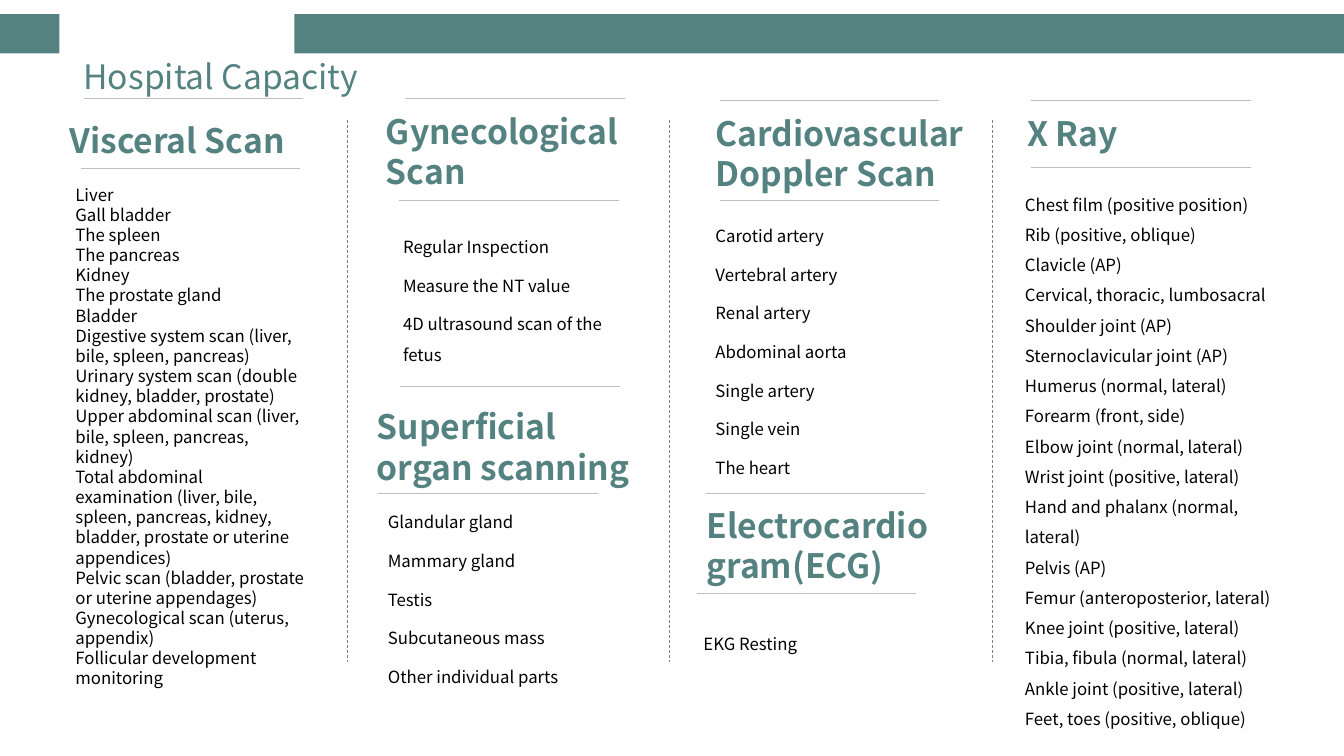
from dataclasses import dataclass

from lxml import etree
from pptx import Presentation
from pptx.dml.color import RGBColor
from pptx.enum.dml import MSO_LINE
from pptx.enum.shapes import MSO_CONNECTOR, MSO_SHAPE
from pptx.enum.text import MSO_ANCHOR, MSO_AUTO_SIZE, PP_ALIGN
from pptx.oxml.ns import qn
from pptx.util import Inches, Pt

STRAIGHT = MSO_CONNECTOR.STRAIGHT
RECTANGLE = MSO_SHAPE.RECTANGLE
DASH = MSO_LINE.DASH
TOP, MIDDLE = MSO_ANCHOR.TOP, MSO_ANCHOR.MIDDLE
LEFT, CENTER = PP_ALIGN.LEFT, PP_ALIGN.CENTER


@dataclass(frozen=True)
class Theme:
    font: str = "Noto Sans CJK SC"
    teal: RGBColor = RGBColor(0x54, 0x82, 0x80)
    black: RGBColor = RGBColor(0, 0, 0)
    rule: RGBColor = RGBColor(0xBF, 0xBF, 0xBF)
    divider: RGBColor = RGBColor(0x80, 0x80, 0x80)
    heading_size: int = 24
    body_size: int = 12
    line_width: float = 0.5


# Grid: ten columns and ten rows to the inch
CELL = Inches(0.1)
COLUMNS, ROWS = 133.33, 75
RULE_COLUMNS = 21.8


def cells(*counts):
    return [round(count * CELL) for count in counts]


class SlideBuilder:
    def __init__(self, slide, theme):
        self.slide = slide
        self.theme = theme

    def band(self, column, row, width, height):
        shape = self.slide.shapes.add_shape(RECTANGLE, *cells(column, row, width, height))
        shape.shadow.inherit = False
        shape.fill.solid()
        shape.fill.fore_color.rgb = self.theme.teal
        shape.line.fill.background()

    def line(self, start, end, color, dash=None):
        connector = self.slide.shapes.add_connector(STRAIGHT, *cells(*start, *end))
        connector.line.color.rgb = color
        connector.line.width = Pt(self.theme.line_width)
        if dash is not None:
            connector.line.dash_style = dash
        etree.SubElement(connector._element.spPr, qn("a:effectLst"))

    def rule(self, column, row):
        self.line((column, row), (column + RULE_COLUMNS, row), self.theme.rule)

    def text(self, box, lines, size, color, bold=False, spacing=None, gap=0,
             anchor=TOP, align=LEFT):
        frame = self.slide.shapes.add_textbox(*cells(*box)).text_frame
        frame.word_wrap = True
        frame.auto_size = MSO_AUTO_SIZE.SHAPE_TO_FIT_TEXT
        frame.vertical_anchor = anchor
        frame.text = "\n".join(lines)
        for index, paragraph in enumerate(frame.paragraphs):
            paragraph.alignment = align
            paragraph.space_before = Pt(gap if index else 0)
            if spacing:
                paragraph.line_spacing = spacing
            for run in paragraph.runs:
                run.font.name = self.theme.font
                run.font.size = Pt(size)
                run.font.bold = bold
                run.font.color.rgb = color

    def heading(self, box, title):
        self.text(box, [title], self.theme.heading_size, self.theme.teal, bold=True)

    def section(self, section):
        self.rule(*section.rule_above)
        self.heading(section.heading_box, section.title)
        self.rule(*section.rule_below)
        self.text(section.list_box, section.items, self.theme.body_size,
                  self.theme.black, spacing=section.spacing, gap=section.gap)


@dataclass(frozen=True)
class Section:
    title: str
    rule_above: tuple
    heading_box: tuple
    rule_below: tuple
    list_box: tuple
    items: tuple
    spacing: float = 1.5
    gap: int = 6


SECTIONS = (
    Section("Visceral Scan", (8.3, 9.8), (5.9, 11.4, 28, 5.1), (8, 16.7),
            (6.5, 17.8, 24.7, 56.6), (
                "Liver",
                "Gall bladder",
                "The spleen",
                "The pancreas",
                "Kidney",
                "The prostate gland",
                "Bladder",
                "Digestive system scan (liver, bile, spleen, pancreas)",
                "Urinary system scan (double kidney, bladder, prostate)",
                "Upper abdominal scan (liver, bile, spleen, pancreas, kidney)",
                "Total abdominal examination (liver, bile, spleen, pancreas, "
                "kidney, bladder, prostate or uterine appendices)",
                "Pelvic scan (bladder, prostate or uterine appendages)",
                "Gynecological scan (uterus, appendix)",
                "Follicular development monitoring",
            ), spacing=None, gap=0),
    Section("Gynecological Scan", (40.2, 9.8), (37.3, 10.5, 28.9, 9.1), (39.6, 19.9),
            (39, 22, 23.2, 14.5), (
                "Regular Inspection",
                "Measure the NT value",
                "4D ultrasound scan of the fetus",
            )),
    Section("Superficial organ scanning", (39.7, 38.3), (36.4, 39.8, 28.2, 9.1),
            (37.5, 48.9), (37.5, 49.3, 28.4, 19.2), (
                "Glandular gland",
                "Mammary gland",
                "Testis",
                "Subcutaneous mass",
                "Other individual parts",
            )),
    Section("Cardiovascular Doppler Scan", (71.4, 10), (70, 10.7, 27.4, 9.1),
            (71.4, 19.9), (70, 20.9, 21.4, 26.9), (
                "Carotid artery",
                "Vertebral artery",
                "Renal artery",
                "Abdominal aorta",
                "Single artery",
                "Single vein",
                "The heart",
            )),
    Section("Electrocardiogram(ECG)", (70, 48.9), (69.1, 49.6, 25.4, 9.1),
            (69.1, 58.9), (68.8, 61.4, 23.2, 3.7), ("EKG Resting",)),
    Section("X Ray", (102.3, 10), (100.9, 10.7, 24.8, 5), (102.3, 16.6),
            (100.7, 17.8, 26.4, 55.2), (
                "Chest film (positive position)",
                "Rib (positive, oblique)",
                "Clavicle (AP)",
                "Cervical, thoracic, lumbosacral",
                "Shoulder joint (AP)",
                "Sternoclavicular joint (AP)",
                "Humerus (normal, lateral)",
                "Forearm (front, side)",
                "Elbow joint (normal, lateral)",
                "Wrist joint (positive, lateral)",
                "Hand and phalanx (normal, lateral)",
                "Pelvis (AP)",
                "Femur (anteroposterior, lateral)",
                "Knee joint (positive, lateral)",
                "Tibia, fibula (normal, lateral)",
                "Ankle joint (positive, lateral)",
                "Feet, toes (positive, oblique)",
            ), gap=0),
)


def main():
    presentation = Presentation()
    presentation.slide_width, presentation.slide_height = cells(COLUMNS, ROWS)
    slide = presentation.slides.add_slide(presentation.slide_layouts[6])
    theme = Theme()
    builder = SlideBuilder(slide, theme)

    # Header band, open above the title
    for column, end in ((0, 5.9), (29.2, COLUMNS)):
        builder.band(column, 1.4, end - column, 3.9)

    # Scan sections
    for section in SECTIONS:
        builder.section(section)

    # Dashed dividers between the columns
    for column in (34.5, 66.4, 98.4):
        builder.line((column, 11.9), (column, 65.7), theme.divider, DASH)

    # Slide title
    builder.text((4.9, 5, 34, 5), ["Hospital Capacity"], theme.heading_size,
                 theme.teal, anchor=MIDDLE, align=CENTER)

    presentation.save("out.pptx")


if __name__ == "__main__":
    main()
